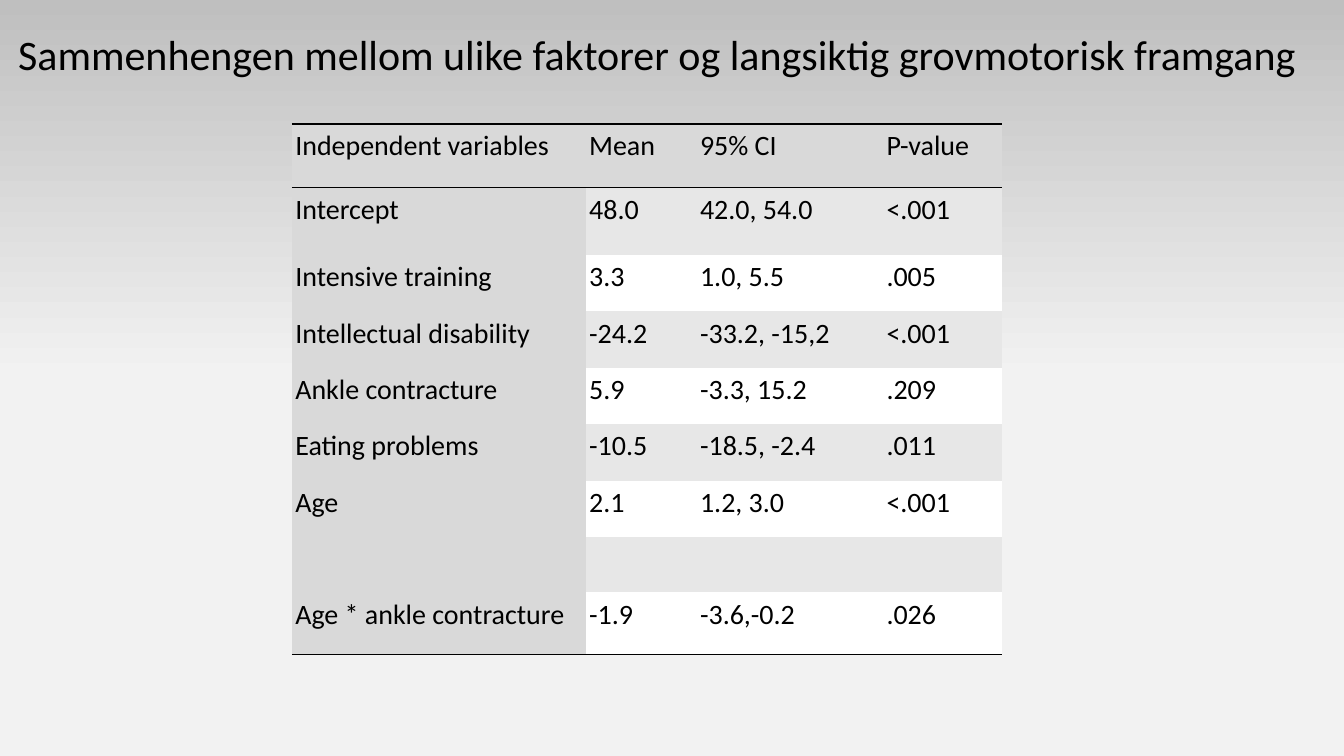
from copy import deepcopy
from dataclasses import dataclass

from lxml.etree import SubElement
from pptx import Presentation
from pptx.dml.color import RGBColor
from pptx.enum.text import MSO_ANCHOR, MSO_AUTO_SIZE, PP_ALIGN
from pptx.oxml.ns import qn
from pptx.slide import Slide
from pptx.table import _Cell
from pptx.text.text import _Paragraph
from pptx.util import Pt

FONT = "Calibri"
BLACK = "000000"
LABEL_FILL = "D9D9D9"
BAND_FILLS = ("FFFFFF", "E7E7E7")
PLAIN_TABLE_STYLE = "{2D5ABB26-0587-4C30-8999-92F81FD0307C}"
TITLE = "Sammenhengen mellom ulike faktorer og langsiktig grovmotorisk framgang"
COLUMN_WIDTHS = (419.8, 158.4, 266.4, 169.9)


@dataclass(frozen=True)
class TableRow:
    height: float
    texts: tuple[str, str, str, str]
    borders: tuple[str, ...] = ()


ROWS = (
    TableRow(90.7, ("Independent variables", "Mean", "95% CI", "P-value"), ("lnT", "lnB")),
    TableRow(96.5, ("Intercept", "48.0", "42.0, 54.0", "<.001")),
    TableRow(80.6, ("Intensive training", "3.3", "1.0, 5.5", ".005")),
    TableRow(80.6, ("Intellectual disability", "-24.2", "-33.2, -15,2", "<.001")),
    TableRow(80.6, ("Ankle contracture", "5.9", "-3.3, 15.2", ".209")),
    TableRow(80.6, ("Eating problems", "-10.5", "-18.5, -2.4", ".011")),
    TableRow(80.6, ("Age", "2.1", "1.2, 3.0", "<.001")),
    TableRow(79.2, ("", "", "", "")),
    TableRow(88.6, ("Age * ankle contracture", "-1.9", "-3.6,-0.2", ".026"), ("lnB",)),
)


def color(value: str) -> RGBColor:
    return RGBColor.from_string(value)


def apply_format(target: object, values: dict[str, object]) -> None:
    for name, value in values.items():
        setattr(target, name, value)


def format_font(paragraph: _Paragraph, size: float) -> None:
    apply_format(paragraph.font, {"name": FONT, "size": Pt(size), "bold": False})
    paragraph.font.color.rgb = color(BLACK)


def draw_background(slide: Slide) -> None:
    fill = slide.background.fill
    fill.gradient()
    fill.gradient_angle = 270
    for stop, value, position in zip(fill.gradient_stops, ("BFBFBF", "F2F2F2"), (0, 0.5)):
        stop.color.rgb = color(value)
        stop.position = position
    stop_list = next(slide.element.iter(qn("a:gsLst")))
    final_stop = deepcopy(stop_list[-1])
    final_stop.set("pos", "100000")
    stop_list.append(final_stop)


def draw_title(slide: Slide) -> None:
    title = slide.shapes.title
    apply_format(title, {"left": Pt(18.7), "top": Pt(36.7), "width": Pt(1870.6), "height": Pt(79.9)})
    frame = title.text_frame
    frame.text = TITLE
    apply_format(frame, {
        "word_wrap": False,
        "auto_size": MSO_AUTO_SIZE.SHAPE_TO_FIT_TEXT,
        "vertical_anchor": MSO_ANCHOR.TOP,
    })
    paragraph = frame.paragraphs[0]
    paragraph.alignment = PP_ALIGN.LEFT
    format_font(paragraph, 60)


def draw_border(cell: _Cell, tag: str, index: int) -> None:
    properties = cell._tc.get_or_add_tcPr()
    line = SubElement(properties, qn(f"a:{tag}"), w=str(Pt(2)))
    solid_fill = SubElement(line, qn("a:solidFill"))
    SubElement(solid_fill, qn("a:srgbClr"), val=BLACK)
    properties.insert(index, line)


def draw_cell(cell: _Cell, text: str, fill: str, borders: tuple[str, ...]) -> None:
    cell.text = text
    apply_format(cell, {
        "margin_left": Pt(5),
        "margin_right": Pt(5),
        "margin_top": Pt(0),
        "margin_bottom": Pt(0),
    })
    cell.fill.solid()
    cell.fill.fore_color.rgb = color(fill)
    for index, tag in enumerate(borders):
        draw_border(cell, tag, index)
    paragraph = cell.text_frame.paragraphs[0]
    paragraph.line_spacing = 1.15
    format_font(paragraph, 40)


def draw_table(slide: Slide) -> None:
    frame = slide.shapes.add_table(
        len(ROWS), len(COLUMN_WIDTHS), Pt(416.9), Pt(177.1),
        Pt(sum(COLUMN_WIDTHS)), Pt(sum(row.height for row in ROWS)),
    )
    table = frame.table
    apply_format(table, {"first_row": False, "horz_banding": False})
    next(frame.element.iter(qn("a:tableStyleId"))).text = PLAIN_TABLE_STYLE
    for column, width in zip(table.columns, COLUMN_WIDTHS):
        column.width = Pt(width)
    for row_index, row in enumerate(ROWS):
        table.rows[row_index].height = Pt(row.height)
        for column_index, text in enumerate(row.texts):
            is_label = row_index == 0 or column_index == 0
            fill = LABEL_FILL if is_label else BAND_FILLS[row_index % 2]
            draw_cell(table.cell(row_index, column_index), text, fill, row.borders)


def main() -> None:
    presentation = Presentation()
    apply_format(presentation, {"slide_width": Pt(1920), "slide_height": Pt(1080)})
    slide = presentation.slides.add_slide(presentation.slide_layouts.get_by_name("Title Only"))
    draw_background(slide)
    draw_table(slide)
    draw_title(slide)
    presentation.save("out.pptx")


if __name__ == "__main__":
    main()
